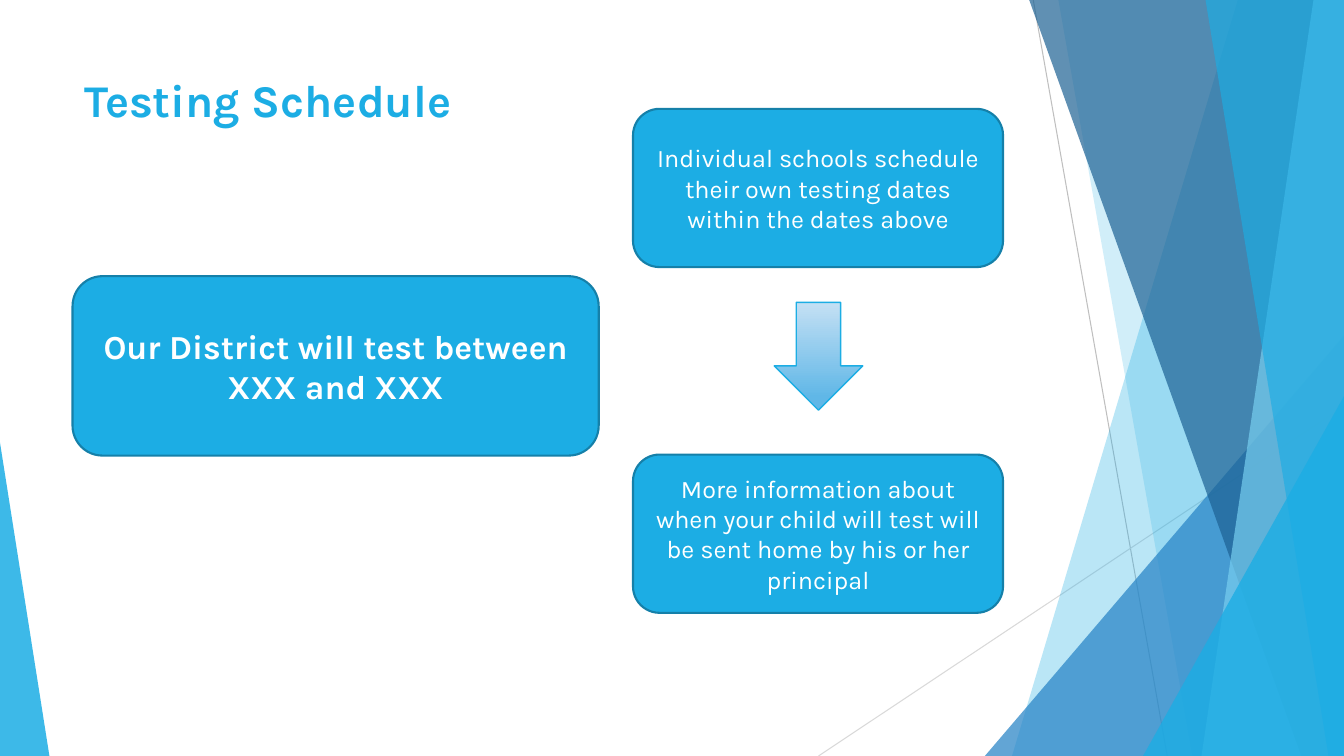
import dataclasses

import lxml.etree
import pptx
import pptx.dml.color
import pptx.enum.shapes
import pptx.enum.text
import pptx.oxml.ns
import pptx.util

SHAPES = pptx.enum.shapes.MSO_SHAPE
ALIGN = pptx.enum.text.PP_ALIGN


@dataclasses.dataclass(frozen=True)
class Theme:
    font: str = "Karla"
    sky: str = "1CADE4"
    pale_sky: str = "77CEEF"
    blue: str = "2683C6"
    navy: str = "1D6294"
    outline: str = "1580A9"
    white: str = "FFFFFF"
    grey: str = "BFBFBF"
    light_grey: str = "D9D9D9"
    arrow_top: str = "C4E0F4"
    arrow_bottom: str = "60B7E7"
    title_size: float = 32.4
    lead_size: float = 24
    body_size: float = 18


THEME = Theme()
WIDTH = pptx.util.Inches(13.333)
HEIGHT = pptx.util.Inches(7.5)


# Every position and length below is a percentage of the slide's size.
@dataclasses.dataclass(frozen=True)
class Area:
    left: float
    top: float
    width: float
    height: float


@dataclasses.dataclass(frozen=True)
class Ray:
    start: tuple[float, float]
    end: tuple[float, float]
    colour: str


@dataclasses.dataclass(frozen=True)
class Band:
    """A facet from its slanted left edge to the slide's right edge."""
    top_x: float
    bottom_x: float
    colour: str
    opacity: int


@dataclasses.dataclass(frozen=True)
class Wedge:
    """A right triangle standing on the slide's bottom edge."""
    left: float
    right: float
    top: float
    apex: float
    colour: str
    opacity: int


@dataclasses.dataclass(frozen=True)
class Card:
    area: Area
    text: str
    size: float
    bold: bool = False


RAYS = [
    Ray((76.88, 0), (86.85, 100), THEME.grey),
    Ray((100, 53.73), (60.9, 100), THEME.light_grey),
]
FACETS = [
    Band(92.1, 75.3, THEME.sky, 30),
    Band(78.75, 88.73, THEME.sky, 20),
    Wedge(73.28, 100, 44.4, 1, THEME.blue, 72),
    Band(76.58, 96.83, THEME.navy, 70),
    Band(97.73, 89.4, THEME.pale_sky, 70),
    Band(89.7, 98.85, THEME.sky, 65),
    Wedge(85.05, 100, 52.4, 1, THEME.sky, 80),
    Wedge(0, 3.68, 58.53, 0, THEME.sky, 85),
]
TITLE_AREA = Area(5.55, 8.93, 70.5, 8.53)
ARROW_AREA = Area(57.6, 40, 6.6, 14.27)
CARDS = [
    Card(Area(5.4, 36.53, 39.15, 23.73),
         "Our District will test between XXX and XXX", THEME.lead_size, True),
    Card(Area(47.1, 14.4, 27.53, 20.93),
         "Individual schools schedule their own testing dates within the dates above",
         THEME.body_size),
    Card(Area(47.1, 60.13, 27.53, 20.93),
         "More information about when your child will test will be sent home "
         "by his or her principal", THEME.body_size),
]


def across(share: float) -> int:
    return round(WIDTH * share / 100)


def down(share: float) -> int:
    return round(HEIGHT * share / 100)


def place(area: Area) -> tuple[int, int, int, int]:
    return across(area.left), down(area.top), across(area.width), down(area.height)


def rgb(colour: str) -> pptx.dml.color.RGBColor:
    return pptx.dml.color.RGBColor.from_string(colour)


def write(shape, text: str, *, size: float, colour: str, bold: bool = False,
          align=ALIGN.LEFT) -> None:
    frame = shape.text_frame
    frame.word_wrap = True
    frame.auto_size = pptx.enum.text.MSO_AUTO_SIZE.NONE
    frame.vertical_anchor = pptx.enum.text.MSO_ANCHOR.MIDDLE
    para = frame.paragraphs[0]
    para.alignment = align
    span = para.add_run()
    span.text = text
    span.font.name = THEME.font
    span.font.size = pptx.util.Pt(size)
    span.font.bold = bold
    span.font.color.rgb = rgb(colour)


def outline(shape, colour: str, width: float) -> None:
    shape.line.color.rgb = rgb(colour)
    shape.line.width = pptx.util.Pt(width)


def draw_ray(page, ray: Ray) -> None:
    line = page.shapes.add_connector(
        pptx.enum.shapes.MSO_CONNECTOR.STRAIGHT,
        across(ray.start[0]), down(ray.start[1]),
        across(ray.end[0]), down(ray.end[1]))
    outline(line, ray.colour, 0.75)
    lxml.etree.SubElement(line._element.spPr, pptx.oxml.ns.qn("a:effectLst"))


def draw_facet(page, facet: Band | Wedge) -> None:
    if isinstance(facet, Band):
        builder = page.shapes.build_freeform(across(facet.top_x), 0)
        builder.add_line_segments(
            [(WIDTH, 0), (WIDTH, HEIGHT), (across(facet.bottom_x), HEIGHT)])
        shape = builder.convert_to_shape()
    else:
        area = Area(facet.left, facet.top, facet.right - facet.left, 100 - facet.top)
        shape = page.shapes.add_shape(SHAPES.ISOSCELES_TRIANGLE, *place(area))
        shape.adjustments[0] = facet.apex
    shape.shadow.inherit = False
    shape.line.fill.background()
    shape.fill.solid()
    shape.fill.fore_color.rgb = rgb(facet.colour)
    fill_colour = shape._element.spPr.find(".//" + pptx.oxml.ns.qn("a:srgbClr"))
    alpha = lxml.etree.SubElement(fill_colour, pptx.oxml.ns.qn("a:alpha"))
    alpha.set("val", str(facet.opacity * 1000))


def draw_card(page, card: Card) -> None:
    box = page.shapes.add_shape(SHAPES.ROUNDED_RECTANGLE, *place(card.area))
    box.shadow.inherit = False
    box.fill.solid()
    box.fill.fore_color.rgb = rgb(THEME.sky)
    outline(box, THEME.outline, 1.5)
    write(box, card.text, size=card.size, colour=THEME.white, bold=card.bold,
          align=ALIGN.CENTER)


def draw_arrow(page, area: Area) -> None:
    arrow = page.shapes.add_shape(SHAPES.DOWN_ARROW, *place(area))
    arrow.shadow.inherit = False
    arrow.fill.gradient()
    arrow.fill.gradient_angle = 270
    stops = [(0, THEME.arrow_top), (0.88, THEME.arrow_bottom)]
    for stop, (position, colour) in zip(arrow.fill.gradient_stops, stops):
        stop.position = position
        stop.color.rgb = rgb(colour)
    outline(arrow, THEME.sky, 1)


def main() -> None:
    deck = pptx.Presentation()
    deck.slide_width, deck.slide_height = WIDTH, HEIGHT
    page = deck.slides.add_slide(deck.slide_layouts.get_by_name("Title Only"))

    # Background facets
    for ray in RAYS:
        draw_ray(page, ray)
    for facet in FACETS:
        draw_facet(page, facet)

    # Title
    title = page.shapes.title
    title.left, title.top, title.width, title.height = place(TITLE_AREA)
    write(title, "Testing Schedule", size=THEME.title_size, colour=THEME.sky, bold=True)

    # Schedule cards and the arrow between them
    for card in CARDS:
        draw_card(page, card)
    draw_arrow(page, ARROW_AREA)

    deck.save("out.pptx")


if __name__ == "__main__":
    main()
